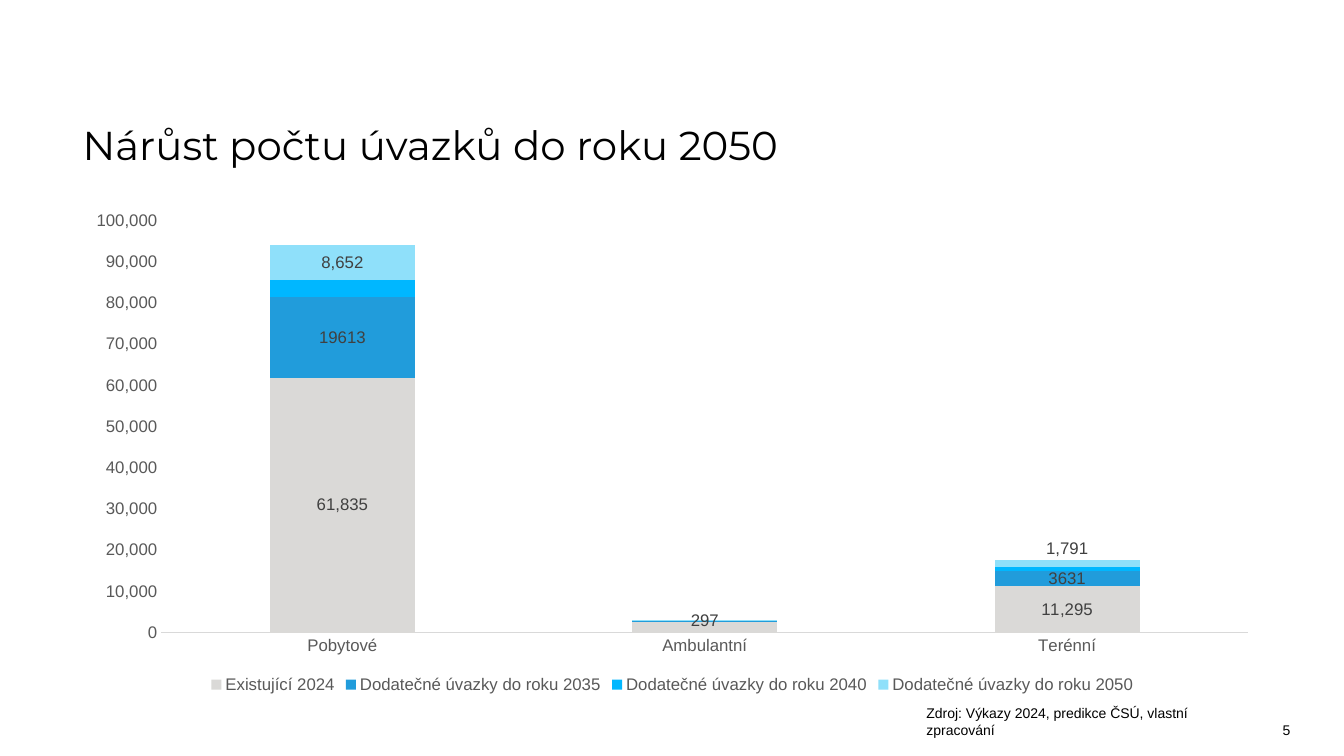
from dataclasses import dataclass

from lxml import etree
from pptx import Presentation
from pptx.chart.data import CategoryChartData
from pptx.dml.color import RGBColor
from pptx.enum.chart import (XL_CHART_TYPE, XL_LABEL_POSITION,
                             XL_LEGEND_POSITION, XL_TICK_MARK)
from pptx.enum.text import MSO_ANCHOR, MSO_AUTO_SIZE, PP_ALIGN
from pptx.oxml.ns import qn
from pptx.util import Inches, Pt

STACKED = XL_CHART_TYPE.COLUMN_STACKED
CENTER_LABEL = XL_LABEL_POSITION.CENTER
LEGEND_BOTTOM = XL_LEGEND_POSITION.BOTTOM
NO_TICKS = XL_TICK_MARK.NONE
MIDDLE = MSO_ANCHOR.MIDDLE
LEFT, CENTER = PP_ALIGN.LEFT, PP_ALIGN.CENTER


@dataclass(frozen=True)
class Theme:
    heading_font: str = "Montserrat"
    body_font: str = "Arial"
    title_size: float = 28.8
    chart_size: float = 12
    note_size: float = 10
    text: str = "000000"
    axis_text: str = "595959"
    label_text: str = "404040"
    axis_line: str = "D9D9D9"


theme = Theme()
THOUSANDS = "#,##0"

prs = Presentation()
prs.slide_width, prs.slide_height = Inches(13.33), Inches(7.5)


def area(left, top, width, height):
    """Turn percentages of the slide into lengths."""
    across, down = prs.slide_width / 100, prs.slide_height / 100
    return (int(left * across), int(top * down),
            int(width * across), int(height * down))


def style(font, name, size, color):
    font.name, font.size = name, Pt(size)
    font.color.rgb = RGBColor.from_string(color)


slide = prs.slides.add_slide(prs.slide_layouts[5])

# Title
title = slide.shapes.title
title.left, title.top, title.width, title.height = area(5.4, 15.73, 77.5, 7.6)
title.text_frame.text = "Nárůst počtu úvazků do roku 2050"
title.text_frame.auto_size = MSO_AUTO_SIZE.NONE
title.text_frame.vertical_anchor = MIDDLE
heading = title.text_frame.paragraphs[0]
heading.alignment, heading.line_spacing = LEFT, 0.9
style(heading.font, theme.heading_font, theme.title_size, theme.text)

# Workload chart: name, values, colour, label format
workloads = [
    ("Existující 2024", (61835, 2665, 11295), "DAD9D7", THOUSANDS),
    ("Dodatečné úvazky do roku 2035", (19613, 297, 3631), "219CDB", "0"),
    ("Dodatečné úvazky do roku 2040", (4000, 0, 1000), "00B7FF", None),
    ("Dodatečné úvazky do roku 2050", (8652, 165, 1791), "8FE0FA", THOUSANDS),
]
data = CategoryChartData(number_format=THOUSANDS)
data.categories = ["Pobytové", "Ambulantní", "Terénní"]
for name, values, *_ in workloads:
    data.add_series(name, values)

chart = slide.shapes.add_chart(STACKED, *area(5.4, 26.67, 89.27, 65.6), data).chart
chart.has_title = False
style(chart.font, theme.body_font, theme.chart_size, theme.text)
chart.has_legend = True
chart.legend.position = LEGEND_BOTTOM
chart.legend.include_in_layout = False

# Axes and legend
for part in (chart.category_axis.tick_labels, chart.value_axis.tick_labels,
             chart.legend):
    style(part.font, theme.body_font, theme.chart_size, theme.axis_text)
for axis in (chart.category_axis, chart.value_axis):
    axis.major_tick_mark = axis.minor_tick_mark = NO_TICKS
    axis.has_major_gridlines = False
baseline = chart.category_axis.format.line
baseline.color.rgb = RGBColor.from_string(theme.axis_line)
baseline.width = Pt(0.75)
chart.value_axis.format.line.fill.background()
chart.value_axis.minimum_scale, chart.value_axis.maximum_scale = 0, 100000
chart.value_axis.major_unit = 10000
chart.value_axis.tick_labels.number_format = THOUSANDS
chart.value_axis.tick_labels.number_format_is_linked = False

# Column segments and their values
plot = chart.plots[0]
plot.gap_width, plot.overlap, plot.vary_by_categories = 150, 100, False
for series, (_, _, color, label_format) in zip(plot.series, workloads):
    series.format.fill.solid()
    series.format.fill.fore_color.rgb = RGBColor.from_string(color)
    if label_format:
        labels = series.data_labels
        labels.show_value = True
        labels.position = CENTER_LABEL
        labels.number_format = label_format
        labels.number_format_is_linked = False
        style(labels.font, theme.body_font, theme.chart_size, theme.label_text)

existing, _, _, by_2050 = plot.series

# Raise the last value above its thin segment
raised = by_2050.points[2].data_label
raised.position = CENTER_LABEL
style(raised.font, theme.body_font, theme.chart_size, theme.label_text)
raised_xml = by_2050.data_labels._element.find(qn("c:dLbl"))
layout = etree.Element(qn("c:layout"))
manual = etree.SubElement(layout, qn("c:manualLayout"))
for axis_name, shift in (("x", "0"), ("y", "-0.03")):
    etree.SubElement(manual, qn(f"c:{axis_name}"), val=shift)
number_format = etree.Element(qn("c:numFmt"), formatCode=THOUSANDS, sourceLinked="0")
raised_xml.insert(1, layout)
raised_xml.insert(2, number_format)

# Omit the outpatient values that do not fit
for series in (existing, by_2050):
    omitted = etree.Element(qn("c:dLbl"))
    etree.SubElement(omitted, qn("c:idx"), val="1")
    etree.SubElement(omitted, qn("c:delete"), val="1")
    series.data_labels._element.insert(0, omitted)

# Source note and page number
for text, place, alignment, anchor in (
    ("Zdroj: Výkazy 2024, predikce ČSÚ, vlastní zpracování",
     (68.19, 92.53, 23.26, 5.87), LEFT, MSO_ANCHOR.TOP),
    ("5", (91.45, 94.4, 8.55, 4.27), CENTER, MIDDLE),
):
    frame = slide.shapes.add_textbox(*area(*place)).text_frame
    frame.word_wrap, frame.vertical_anchor = True, anchor
    frame.text = text
    frame.paragraphs[0].alignment = alignment
    style(frame.paragraphs[0].font, theme.body_font, theme.note_size, theme.text)

prs.save("out.pptx")
